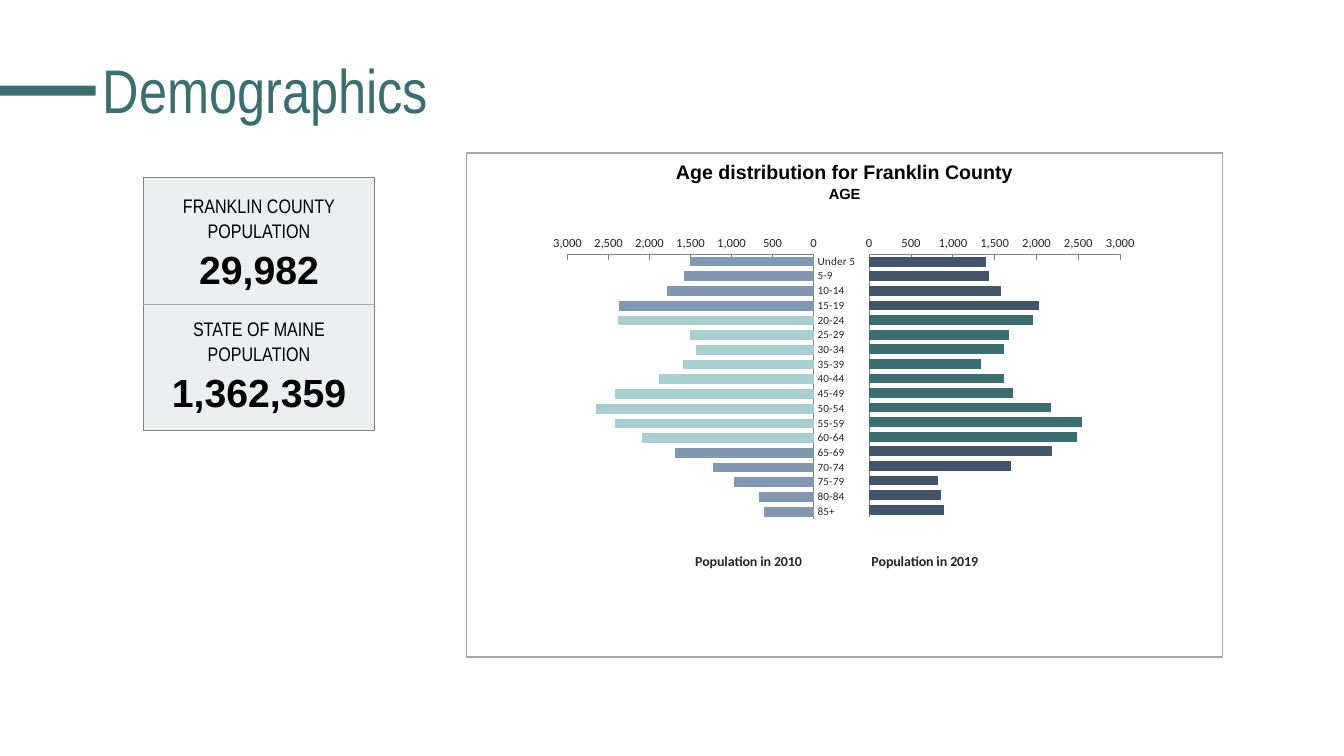
import pptx
import pptx.util
import pptx.dml.color
import pptx.chart.data
import pptx.enum.chart
import pptx.enum.shapes
import pptx.enum.text
import pptx.oxml
import pptx.oxml.ns

Pt = pptx.util.Pt
RGB = pptx.dml.color.RGBColor
Axis = pptx.enum.chart
Shape = pptx.enum.shapes.MSO_SHAPE
Align = pptx.enum.text.PP_ALIGN
Anchor = pptx.enum.text.MSO_ANCHOR
qn = pptx.oxml.ns.qn
SPACE = pptx.oxml.ns.nsdecls("a", "c")

TEAL = RGB(0x3D, 0x6E, 0x6F)
MINT = RGB(0xA8, 0xCE, 0xCF)
NAVY = RGB(0x44, 0x54, 0x6A)
STEEL = RGB(0x84, 0x97, 0xB0)
PALE = RGB(0xEC, 0xEF, 0xEF)
GRAY = RGB(0x80, 0x80, 0x80)
EDGE = RGB(0xA6, 0xA6, 0xA6)
RULE = RGB(0xA2, 0xAD, 0xB1)
INK = RGB(0x26, 0x26, 0x26)
BLACK = RGB(0, 0, 0)

AGES = ["Under 5"] + [f"{a}-{a + 4}" for a in range(5, 85, 5)] + ["85+"]
ADULT = range(4, 13)  # 20-24 to 60-64
PAST = [1510, 1580, 1790, 2370, 2380, 1510, 1430, 1590, 1880,
        2420, 2650, 2420, 2090, 1690, 1230, 970, 670, 600]
LATE = [1400, 1430, 1570, 2030, 1960, 1670, 1610, 1340, 1610,
        1720, 2170, 2540, 2490, 2180, 1700, 820, 860, 890]

# Text formats
HEAD = {"size": Pt(44), "name": "Arial Narrow"}
LABEL = {"size": Pt(14), "name": "Arial Narrow"}
COUNT = {"size": Pt(28), "name": "Arial", "bold": True}
TOPIC = {"size": Pt(14), "name": "Arial", "bold": True}
SUB = {**TOPIC, "size": Pt(10.5)}
TICK = {"size": Pt(9), "name": "Calibri", "bold": False}
SMALL = {**TICK, "size": Pt(8)}
NAME = {"size": Pt(10), "name": "Calibri", "bold": True}


def style(font, form, color):
    for key, value in form.items():
        setattr(font, key, value)
    font.color.rgb = color


def write(frame, lines, color=BLACK, align=Align.CENTER, pitch=1.07):
    """Each line is (text, format, space after)."""
    frame.word_wrap = True
    for i, (text, form, after) in enumerate(lines):
        para = frame.add_paragraph() if i else frame.paragraphs[0]
        para.text = text
        para.alignment, para.line_spacing = align, pitch
        para.space_after = Pt(after)
        style(para.font, form, color)


def block(slide, box, fill=None, line=None, width=0.75):
    shape = slide.shapes.add_shape(Shape.RECTANGLE, *map(Pt, box))
    shape.shadow.inherit = False
    if fill is None:
        shape.fill.background()
    else:
        shape.fill.solid()
        shape.fill.fore_color.rgb = fill
    if line is None:
        shape.line.fill.background()
    else:
        shape.line.color.rgb = line
        shape.line.width = Pt(width)
    return shape


def divide(slide, panel):
    y = panel.top + panel.height // 2
    line = slide.shapes.add_connector(
        pptx.enum.shapes.MSO_CONNECTOR.STRAIGHT,
        panel.left, y, panel.left + panel.width, y)
    line.begin_connect(panel, 1)
    line.end_connect(panel, 3)
    line.line.color.rgb = RULE
    line.line.width = Pt(0.5)
    line._element.spPr.append(
        pptx.oxml.parse_xml(f"<a:effectLst {SPACE}/>"))


def layout(parent, index, inner=False, **place):
    """Fix the place of a chart part as shares of the chart."""
    old = parent.find(qn("c:layout"))
    if old is not None:
        parent.remove(old)
    body = '<c:layoutTarget val="inner"/>' if inner else ""
    body += '<c:xMode val="edge"/><c:yMode val="edge"/>'
    body += "".join(f'<c:{k} val="{v}"/>' for k, v in place.items())
    parent.insert(index, pptx.oxml.parse_xml(
        f"<c:layout {SPACE}><c:manualLayout>{body}"
        "</c:manualLayout></c:layout>"))


def bars(slide, box, values, hues, title, spot, plot, flip):
    data = pptx.chart.data.CategoryChartData(number_format="#,##0")
    data.categories = AGES
    data.add_series(title, values)
    chart = slide.shapes.add_chart(
        Axis.XL_CHART_TYPE.BAR_CLUSTERED, *map(Pt, box), data).chart
    chart.has_title = chart.has_legend = False
    style(chart.font, NAME, BLACK)
    root = chart._chartSpace
    root.find(qn("c:txPr")).addprevious(pptx.oxml.parse_xml(
        f"<c:spPr {SPACE}><a:noFill/><a:ln><a:noFill/></a:ln></c:spPr>"))

    # Bars, with working ages in their own colour
    group = chart.plots[0]
    group.gap_width, group.vary_by_categories = 50, False
    row = group.series[0]
    row.format.fill.solid()
    row.format.fill.fore_color.rgb = hues[0]
    for i in ADULT:
        fill = row.points[i].format.fill
        fill.solid()
        fill.fore_color.rgb = hues[1]

    # Axes
    cat, val = chart.category_axis, chart.value_axis
    marks, spots = Axis.XL_TICK_MARK, Axis.XL_TICK_LABEL_POSITION
    forms = (
        (cat, SMALL, {"reverse_order": True, "major_tick_mark": marks.NONE,
                      "crosses": Axis.XL_AXIS_CROSSES.MAXIMUM,
                      "tick_label_position":
                          spots.NEXT_TO_AXIS if flip else spots.NONE}),
        (val, TICK, {"reverse_order": flip, "major_tick_mark": marks.INSIDE,
                     "minimum_scale": 0, "maximum_scale": 3000,
                     "major_unit": 500}))
    for axis, font, form in forms:
        for key, value in form.items():
            setattr(axis, key, value)
        axis.minor_tick_mark = marks.NONE
        axis.has_major_gridlines = False
        axis.format.line.color.rgb = GRAY
        axis.format.line.width = Pt(0.75)
        style(axis.tick_labels.font, font, INK)
    val.tick_labels.number_format = "#,##0"
    val.tick_labels.number_format_is_linked = False

    # Axis title and plot place
    para = val.axis_title.text_frame.paragraphs[0]
    para.text = title
    style(para.font, NAME, INK)
    layout(val.axis_title._element, 1, x=spot[0], y=spot[1])
    layout(root.chart.plotArea, 0, True, **dict(zip("xywh", plot)))


def main():
    deck = pptx.Presentation()
    deck.slide_width, deck.slide_height = Pt(960), Pt(540)
    slide = deck.slides.add_slide(deck.slide_layouts[6])

    # Heading
    block(slide, (0, 61.2, 68.4, 7.2), TEAL)
    head = slide.shapes.add_textbox(*map(Pt, (66.24, 14.4, 828, 104.4)))
    head.text_frame.vertical_anchor = Anchor.MIDDLE
    write(head.text_frame, [("Demographics", HEAD, 0)],
          TEAL, Align.LEFT, 0.9)

    # Population panel
    panel = block(slide, (102.24, 126.72, 165.6, 180.72), PALE, GRAY)
    frame = panel.text_frame
    for side in ("left", "top", "right", "bottom"):
        setattr(frame, f"margin_{side}", 0)
    frame.vertical_anchor = Anchor.MIDDLE
    write(frame, [("FRANKLIN COUNTY", LABEL, 0), ("POPULATION", LABEL, 0),
                  ("29,982", COUNT, 16), ("STATE OF MAINE", LABEL, 0),
                  ("POPULATION", LABEL, 0), ("1,362,359", COUNT, 0)])

    # Age chart frame
    card = block(slide, (333.36, 109.44, 540, 360), None, EDGE, 1)
    card.text_frame.vertical_anchor = Anchor.TOP
    write(card.text_frame, [("Age distribution for Franklin County", TOPIC, 0),
                            ("AGE", SUB, 0)])
    divide(slide, panel)

    # Age charts, back to back
    bars(slide, (607.68, 168.48, 216, 241.2), LATE, (NAVY, TEAL),
         "Population in 2019", (0.06, 0.93),
         (0.061, 0.048, 0.83, 0.785), False)
    bars(slide, (383.04, 168.48, 237.6, 241.2), PAST, (STEEL, MINT),
         "Population in 2010", (0.47, 0.93),
         (0.094, 0.04, 0.74, 0.798), True)
    deck.save("out.pptx")


if __name__ == "__main__":
    main()
